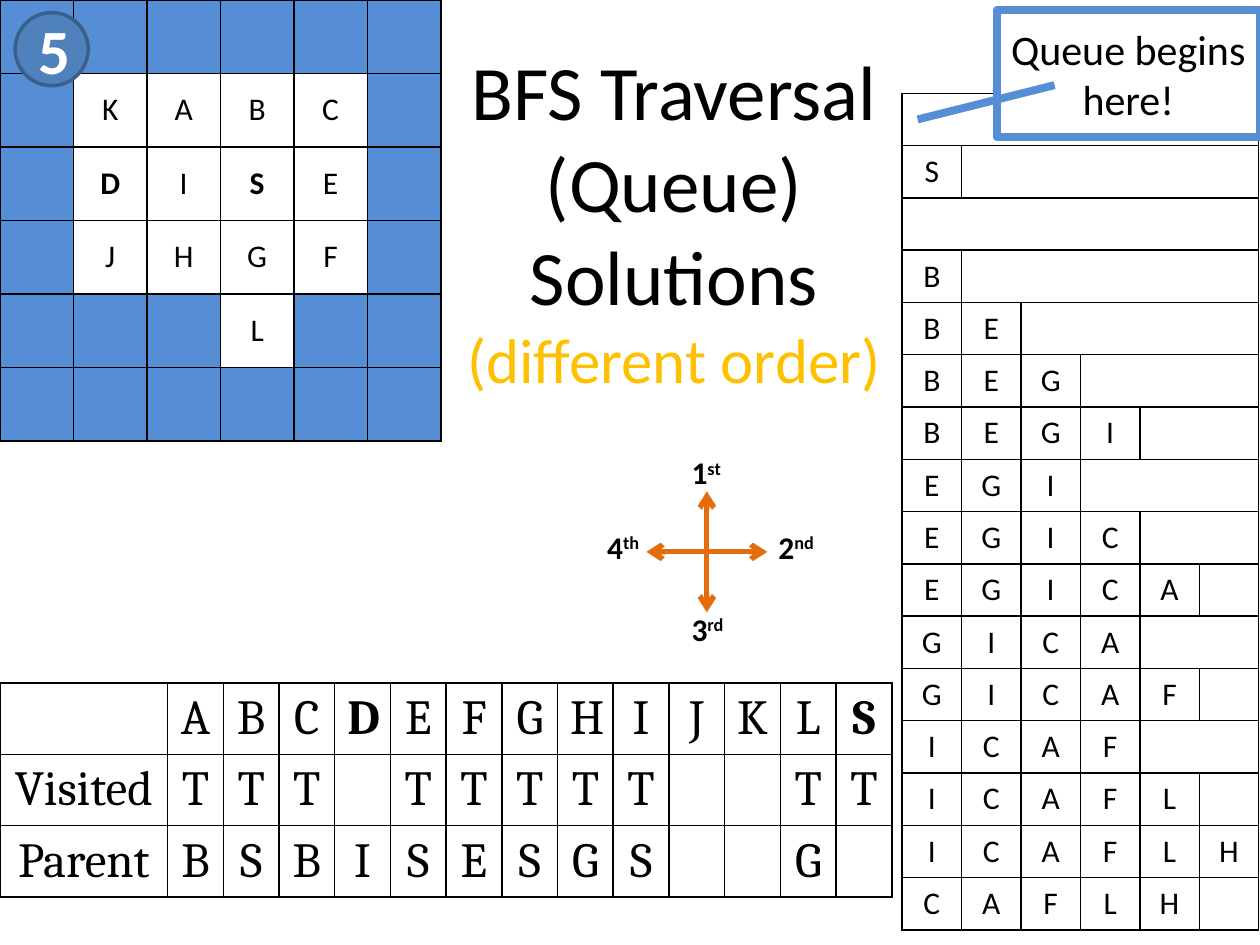
from dataclasses import dataclass

from lxml.etree import SubElement
from pptx import Presentation
from pptx.dml.color import RGBColor
from pptx.enum.shapes import MSO_CONNECTOR as CONN, MSO_SHAPE as SHAPE
from pptx.enum.text import MSO_ANCHOR as ANCHOR, MSO_AUTO_SIZE as FIT, PP_ALIGN as ALIGN
from pptx.oxml import parse_xml
from pptx.oxml.ns import nsdecls, qn
from pptx.util import Inches, Pt


@dataclass(frozen=True)
class Theme:
    sans: str = "Calibri"
    serif: str = "Cambria"
    ink: str = "000000"
    paper: str = "FFFFFF"
    wall: str = "558ED5"
    badge: str = "4F81BD"
    badge_edge: str = "3A5F8C"
    arrow: str = "E46C0A"
    accent: str = "FFC000"
    small: int = 18
    callout: int = 24
    table: int = 28
    large: int = 36
    title: int = 44


# The slide is a grid of 100 columns by 75 rows
COLS, ROWS = 100, 75


class Deck:
    def __init__(self, theme):
        self.t = theme
        self.prs = Presentation()
        self.prs.slide_width, self.prs.slide_height = Inches(10), Inches(7.5)
        self.s = self.prs.slides.add_slide(self.prs.slide_layouts[5])

    def x(self, cols):
        return round(self.prs.slide_width * cols / COLS)

    def y(self, rows):
        return round(self.prs.slide_height * rows / ROWS)

    def box(self, left, top, width, height):
        return self.x(left), self.y(top), self.x(width), self.y(height)

    def run(self, p, text, size, color=None, font=None, bold=False, raised=False):
        r = p.add_run()
        r.text = text
        r.font.size, r.font.bold = Pt(size), bold
        r.font.name = font or self.t.sans
        r.font.color.rgb = RGBColor.from_string(color or self.t.ink)
        if raised:
            r.font._element.set("baseline", "30000")

    def title(self, box, lines):
        sp = self.s.shapes.title
        sp.left, sp.top, sp.width, sp.height = self.box(*box)
        tf = sp.text_frame
        tf.word_wrap, tf.auto_size, tf.vertical_anchor = True, FIT.NONE, ANCHOR.MIDDLE
        p = tf.paragraphs[0]
        p.alignment = ALIGN.CENTER
        for i, line in enumerate(lines):
            if i:
                p.add_line_break()
            for text, size, color in line:
                self.run(p, text, size, color)
        # Bring the title in front of the tables
        self.s.shapes._spTree.append(sp._element)

    def borders(self, cell):
        tc_pr = cell._tc.get_or_add_tcPr()
        for i, side in enumerate("LRTB"):
            tc_pr.insert(i, parse_xml(
                f'<a:ln{side} {nsdecls("a")} w="{Pt(1)}"><a:solidFill>'
                f'<a:srgbClr val="{self.t.ink}"/></a:solidFill></a:ln{side}>'))

    def table(self, box, rows, size, font=None, first=None, bold=(), wall=None, merge=False):
        """Each row holds the cell texts; wall marks filled cells."""
        n = max(map(len, rows))
        left, top, width, height = self.box(*box)
        tbl = self.s.shapes.add_table(len(rows), n, left, top, width, height).table
        tbl.first_row = tbl.horz_banding = False
        if first:
            tbl.columns[0].width = self.x(first)
            for col in list(tbl.columns)[1:]:
                col.width = (width - self.x(first)) // (n - 1)
        for i, row in enumerate(rows):
            tbl.rows[i].height = height // len(rows)
            for j in range(n):
                text = row[j] if j < len(row) else ""
                cell = tbl.cell(i, j)
                self.borders(cell)
                cell.vertical_anchor = ANCHOR.MIDDLE
                if text == wall:
                    cell.fill.solid()
                    cell.fill.fore_color.rgb = RGBColor.from_string(self.t.wall)
                    continue
                cell.fill.background()
                if text.strip():
                    p = cell.text_frame.paragraphs[0]
                    p.alignment = ALIGN.CENTER
                    self.run(p, text, size, font=font, bold=(i, j) in bold)
            if merge and len(row) < n - 1:
                tbl.cell(i, len(row)).merge(tbl.cell(i, n - 1))

    def shape(self, kind, box, text, size, fill, edge, weight, color=None, bold=False, adj=()):
        sp = self.s.shapes.add_shape(kind, *self.box(*box))
        sp.shadow.inherit = False
        for i, value in enumerate(adj):
            sp.adjustments[i] = value
        sp.fill.solid()
        sp.fill.fore_color.rgb = RGBColor.from_string(fill)
        sp.line.color.rgb = RGBColor.from_string(edge)
        sp.line.width = Pt(weight)
        tf = sp.text_frame
        tf.word_wrap, tf.vertical_anchor = True, ANCHOR.MIDDLE
        p = tf.paragraphs[0]
        p.alignment = ALIGN.CENTER
        self.run(p, text, size, color, bold=bold)

    def arrow(self, parent, start, end):
        line = parent.shapes.add_connector(
            CONN.STRAIGHT, self.x(start[0]), self.y(start[1]), self.x(end[0]), self.y(end[1]))
        line.line.color.rgb = RGBColor.from_string(self.t.arrow)
        line.line.width = Pt(3)
        SubElement(line.line._get_or_add_ln(), qn("a:tailEnd"), type="arrow")
        SubElement(line._element.spPr, qn("a:effectLst"))

    def ordinal(self, parent, left, top, number, suffix):
        tf = parent.shapes.add_textbox(*self.box(left, top, 6.4, 4)).text_frame
        tf.word_wrap, tf.auto_size = True, FIT.SHAPE_TO_FIT_TEXT
        p = tf.paragraphs[0]
        self.run(p, number, self.t.small, bold=True)
        self.run(p, suffix, self.t.small, bold=True, raised=True)

    def compass(self, center, reach, labels):
        grp = self.s.shapes.add_group_shape()
        cx, cy = center
        for dx, dy in ((1, 0), (0, 1), (-1, 0), (0, -1)):
            self.arrow(grp, center, (cx + dx * reach, cy + dy * reach))
        for label in labels:
            self.ordinal(grp, *label)


def main():
    t = Theme()
    deck = Deck(t)

    # Maze: "#" is a wall
    maze = ["######", "#KABC#", "#DISE#", "#JHGF#", "###L##", "######"]
    deck.table((0, 0, 35, 35), maze, t.small, bold={(2, 1), (2, 3)}, wall="#")

    # Visited and parent of every node
    nodes = [["", *"ABCDEFGHIJKLS"],
             ["Visited", *"TTT TTTTT  TT"],
             ["Parent", *"BSBISESGS  G "]]
    deck.table((0, 54.2, 70.8, 17), nodes, t.table, t.serif, first=13.3,
               bold={(0, 4), (0, 13)})

    # Queue after each step, with the unused cells merged
    queue = ["", "S", "", "B", "BE", "BEG", "BEGI", "EGI", "EGIC", "EGICA",
             "GICA", "GICAF", "ICAF", "ICAFL", "ICAFLH", "CAFLH"]
    deck.table((71.6, 7.4, 28.3, 66.4), queue, t.small, merge=True)

    # Order of directions
    deck.compass((56.1, 43.8), 4.8, [
        (47.2, 41.4, "4", "th"), (60.8, 41.4, "2", "nd"),
        (53.9, 35.5, "1", "st"), (53.9, 47.9, "3", "rd")])

    # Callout, title and slide number badge
    deck.shape(SHAPE.LINE_CALLOUT_1, (79.1, 0.8, 20.9, 10.1), "Queue begins here!",
               t.callout, t.paper, t.wall, 4.5, adj=(0.86, -0.3, 0.59, 0.22))
    deck.title((35.6, 0.3, 35.8, 34.3), [
        [("BFS Traversal (Queue)", t.title, t.ink)],
        [("Solutions ", t.title, t.ink), ("(different order)", t.large, t.accent)]])
    deck.shape(SHAPE.OVAL, (1.2, 1, 5.8, 5.8), "5", t.large, t.badge, t.badge_edge, 2,
               color=t.paper, bold=True)

    deck.prs.save("out.pptx")


if __name__ == "__main__":
    main()
